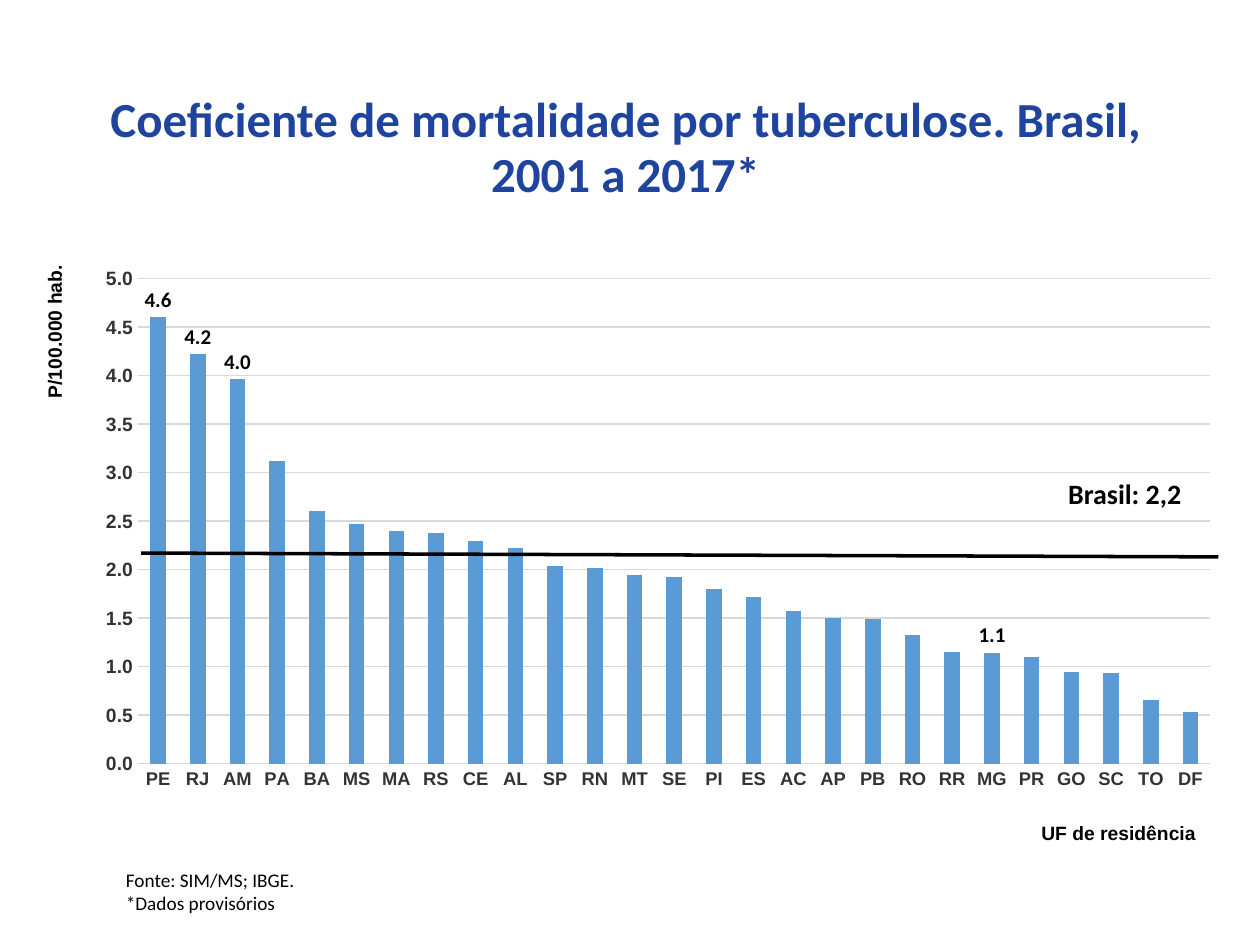
import dataclasses

import lxml.etree
import pptx
import pptx.chart.data
import pptx.dml.color
import pptx.enum.chart
import pptx.enum.shapes
import pptx.enum.text
import pptx.oxml
import pptx.oxml.ns
import pptx.util

SLIDE_WIDTH = pptx.util.Inches(10)
SLIDE_HEIGHT = pptx.util.Inches(7.5)
ALIGN = pptx.enum.text.PP_ALIGN
NAMESPACES = pptx.oxml.ns.nsdecls("c", "a")

# Deaths per 100,000 inhabitants, by state
RATES = {
    "PE": 4.6, "RJ": 4.22, "AM": 3.96, "PA": 3.12, "BA": 2.6, "MS": 2.47,
    "MA": 2.4, "RS": 2.38, "CE": 2.29, "AL": 2.22, "SP": 2.04, "RN": 2.02,
    "MT": 1.94, "SE": 1.92, "PI": 1.8, "ES": 1.72, "AC": 1.57, "AP": 1.5,
    "PB": 1.49, "RO": 1.33, "RR": 1.15, "MG": 1.14, "PR": 1.1, "GO": 0.94,
    "SC": 0.93, "TO": 0.65, "DF": 0.53,
}
LABELLED_STATES = ("PE", "RJ", "AM", "MG")


def text_style(name, size, color, bold=True):
    return {"name": name, "size": size, "color": color, "bold": bold}


@dataclasses.dataclass(frozen=True)
class Theme:
    bar: str = "5B9BD5"
    grid: str = "D9D9D9"
    line: str = "000000"
    title: dict = dataclasses.field(
        default_factory=lambda: text_style("Calibri", 28, "1F449E"))
    chart: dict = dataclasses.field(
        default_factory=lambda: text_style("Calibri", 10, "000000", False))
    categories: dict = dataclasses.field(
        default_factory=lambda: text_style("Arial", 10.5, "333333"))
    values: dict = dataclasses.field(
        default_factory=lambda: text_style("Arial", 11, "333333"))
    point_label: dict = dataclasses.field(
        default_factory=lambda: text_style("Calibri", 12, "000000"))
    axis_title: dict = dataclasses.field(
        default_factory=lambda: text_style("Arial", 11, "000000"))
    source: dict = dataclasses.field(
        default_factory=lambda: text_style("Calibri", 11, "000000", False))
    average: dict = dataclasses.field(
        default_factory=lambda: text_style("Calibri", 16, "000000"))


THEME = Theme()


def rgb(color):
    return pptx.dml.color.RGBColor.from_string(color)


def shares(*percents):
    """Turn alternating x and y percentages of the slide into lengths."""
    sides = (SLIDE_WIDTH, SLIDE_HEIGHT) * 2
    return [round(side * percent / 100) for side, percent in zip(sides, percents)]


def format_font(font, style):
    values = {"name": style["name"], "size": pptx.util.Pt(style["size"]),
              "bold": style["bold"]}
    for attribute, value in values.items():
        setattr(font, attribute, value)
    font.color.rgb = rgb(style["color"])


def format_line(line, color, width):
    line.color.rgb = rgb(color)
    line.width = pptx.util.Pt(width)


def add_title(slide, text, area):
    title = slide.shapes.title
    for attribute, value in zip(("left", "top", "width", "height"), shares(*area)):
        setattr(title, attribute, value)
    frame = title.text_frame
    frame.text = text
    frame.word_wrap = True
    frame.auto_size = pptx.enum.text.MSO_AUTO_SIZE.NONE
    frame.vertical_anchor = pptx.enum.text.MSO_ANCHOR.MIDDLE
    paragraph = frame.paragraphs[0]
    paragraph.alignment = ALIGN.CENTER
    paragraph.line_spacing = 0.93
    format_font(paragraph.font, THEME.title)


def add_text(slide, lines, area, style, alignment=ALIGN.LEFT, rotation=0):
    shape = slide.shapes.add_textbox(*shares(*area))
    shape.rotation = rotation
    frame = shape.text_frame
    frame.word_wrap = True
    frame.text = "\n".join(lines)
    for paragraph in frame.paragraphs:
        paragraph.alignment = alignment
        format_font(paragraph.font, style)


def add_line(slide, ends):
    line = slide.shapes.add_connector(
        pptx.enum.shapes.MSO_CONNECTOR.STRAIGHT, *shares(*ends))
    format_line(line.line, THEME.line, 2)
    lxml.etree.SubElement(line.element.spPr, pptx.oxml.ns.qn("a:effectLst"))


def set_plot_layout(chart, x, y, w, h):
    """Fix the inner plot area and give the chart a plain white ground."""
    plot_area = chart.element.find(".//" + pptx.oxml.ns.qn("c:plotArea"))
    for layout in plot_area.findall(pptx.oxml.ns.qn("c:layout")):
        plot_area.remove(layout)
    sizes = "".join(f'<c:{name} val="{value}"/>' for name, value in
                    (("x", x), ("y", y), ("w", w), ("h", h)))
    plot_area.insert(0, pptx.oxml.parse_xml(
        f'<c:layout {NAMESPACES}><c:manualLayout><c:layoutTarget val="inner"/>'
        f'<c:xMode val="edge"/><c:yMode val="edge"/>{sizes}'
        '</c:manualLayout></c:layout>'))
    plot_area.getparent().addnext(pptx.oxml.parse_xml(
        f'<c:spPr {NAMESPACES}><a:solidFill><a:srgbClr val="FFFFFF"/></a:solidFill>'
        '<a:ln><a:noFill/></a:ln></c:spPr>'))


def format_axes(chart):
    for axis, style in ((chart.category_axis, THEME.categories),
                        (chart.value_axis, THEME.values)):
        axis.major_tick_mark = pptx.enum.chart.XL_TICK_MARK.NONE
        axis.minor_tick_mark = pptx.enum.chart.XL_TICK_MARK.NONE
        format_font(axis.tick_labels.font, style)
    format_line(chart.category_axis.format.line, THEME.grid, 0.75)
    value_axis = chart.value_axis
    scale = {"minimum_scale": 0, "maximum_scale": 5, "major_unit": 0.5,
             "has_major_gridlines": True}
    for attribute, value in scale.items():
        setattr(value_axis, attribute, value)
    value_axis.format.line.fill.background()
    format_line(value_axis.major_gridlines.format.line, THEME.grid, 0.75)
    value_axis.tick_labels.number_format = "0.0"
    value_axis.tick_labels.number_format_is_linked = False


def add_rate_chart(slide, area):
    data = pptx.chart.data.CategoryChartData(number_format="0.0")
    data.categories = list(RATES)
    data.add_series("Series 1", list(RATES.values()))
    frame = slide.shapes.add_chart(
        pptx.enum.chart.XL_CHART_TYPE.COLUMN_CLUSTERED, *shares(*area), data)
    slide.shapes.title.element.addprevious(frame.element)  # behind the title
    chart = frame.chart
    chart.has_legend = False
    chart.has_title = False
    format_font(chart.font, THEME.chart)
    set_plot_layout(chart, 0.1, 0.14, 0.88, 0.68)
    format_axes(chart)

    # Bars, with values on the chosen states
    plot = chart.plots[0]
    for attribute, value in {"gap_width": 156, "overlap": -27,
                             "vary_by_categories": False}.items():
        setattr(plot, attribute, value)
    series = plot.series[0]
    series.format.fill.solid()
    series.format.fill.fore_color.rgb = rgb(THEME.bar)
    series.data_labels.show_value = False
    for index, state in enumerate(RATES):
        if state in LABELLED_STATES:
            label = series.points[index].data_label
            format_font(label.font, THEME.point_label)
            label.position = pptx.enum.chart.XL_LABEL_POSITION.OUTSIDE_END


def main():
    presentation = pptx.Presentation()
    presentation.slide_width = SLIDE_WIDTH
    presentation.slide_height = SLIDE_HEIGHT
    slide = presentation.slides.add_slide(presentation.slide_layouts[5])

    # Title and chart
    add_title(slide, "Coeficiente de mortalidade por tuberculose. Brasil, 2001 a 2017*",
              (3.5, 9.2, 92.3, 13.07))
    add_rate_chart(slide, (1.3, 18.93, 96.7, 75.47))

    # Axis titles and source
    add_text(slide, ["P/100.000 hab."], (-3.1, 31.6, 14.9, 3.87),
             THEME.axis_title, rotation=270)
    add_text(slide, ["Fonte: SIM/MS; IBGE.", "*Dados provisórios"],
             (9, 91.2, 95.3, 6.27), THEME.source)
    add_text(slide, ["UF de residência"], (76.6, 86.27, 19.3, 3.87),
             THEME.axis_title, ALIGN.RIGHT)

    # National average
    add_line(slide, (11.2, 58.53, 96.7, 58.93))
    add_text(slide, ["Brasil: 2,2"], (83.8, 49.73, 11.6, 4.93), THEME.average)
    presentation.save("out.pptx")


if __name__ == "__main__":
    main()
